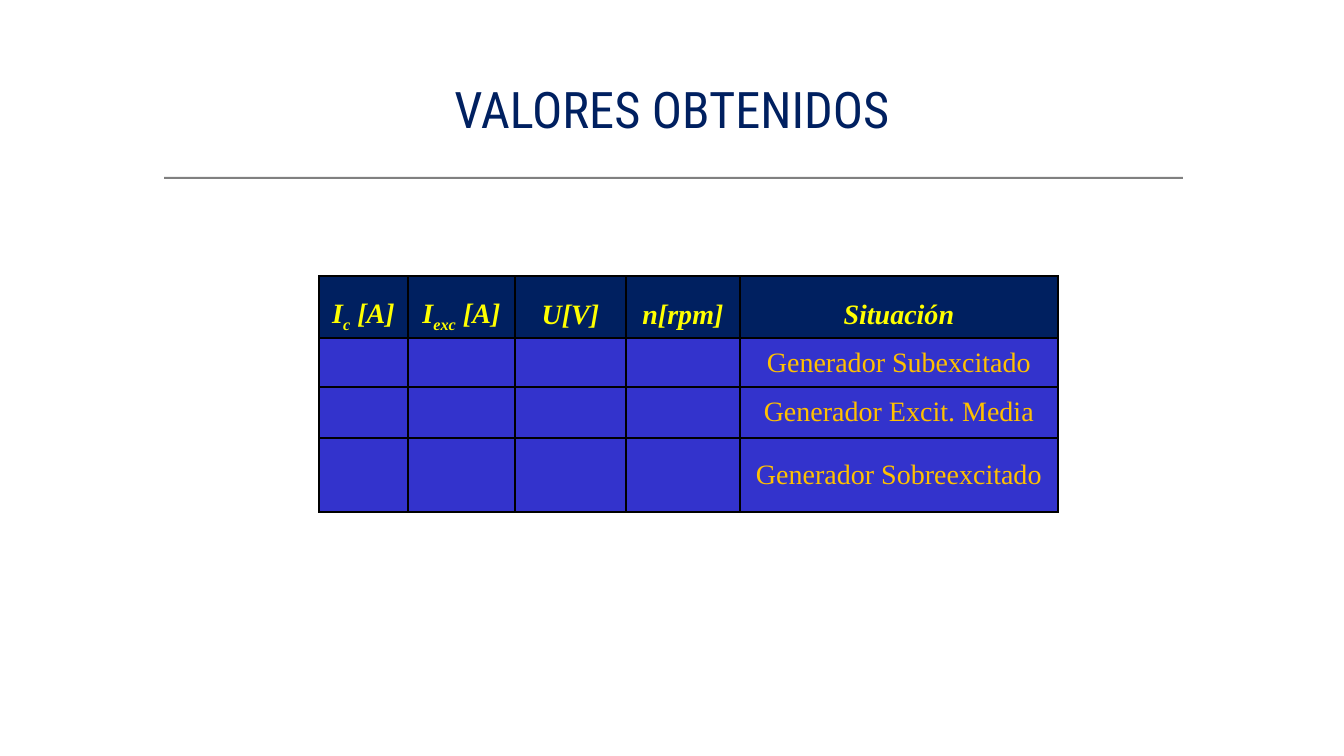
"""Build the slide with the table of measured generator values."""
from lxml.etree import SubElement
from pptx import Presentation
from pptx.dml.color import RGBColor
from pptx.enum.shapes import MSO_SHAPE
from pptx.enum.text import MSO_ANCHOR, PP_ALIGN
from pptx.oxml.ns import qn
from pptx.util import Emu, Pt

TITLE = "VALORES OBTENIDOS"
HEADS = [
    [("I", 0), ("c", 1), (" [A]", 0)],
    [("I", 0), ("exc", 1), (" [A]", 0)],
    [("U[V]", 0)],
    [("n[rpm]", 0)],
    [("Situación", 0)],
]
STATES = ["Generador Subexcitado", "Generador Excit. Media", "Generador Sobreexcitado"]
COLS = [89, 107, 111, 114, 318]
ROWS = [62, 49, 51, 74]
SIZE = (1344, 756)
TITLE_BOX = (168, 62, 1008, 101)
RULE_BOX = (164, 177, 1019, 2)
GRID_AT = (319, 276)

THEME = {
    "navy": "002060", "blue": "3333CC", "gold": "FFC000", "yellow": "FFFF00",
    "gray": "808080", "black": "000000",
    "sans": "Roboto Condensed", "serif": "Times New Roman",
    "big": 36, "body": 20, "line": 1,
}


def px(num):
    return Emu(round(num * 914400 / 100.8))


def color(name):
    return RGBColor.from_string(THEME[name])


def write(frame, parts, *, font="serif", size="body", ink="gold",
          strong=False, space=None):
    para = frame.paragraphs[0]
    para.alignment = PP_ALIGN.CENTER
    para.line_spacing = space
    for text, low in parts:
        run = para.add_run()
        run.text = text
        face = run.font
        face.name, face.size = THEME[font], Pt(THEME[size])
        face.color.rgb = color(ink)
        face.bold = face.italic = strong
        if low:
            face._element.set("baseline", "-25000")


def border(cell):
    props = cell._tc.get_or_add_tcPr()
    for side in ("lnL", "lnR", "lnT", "lnB"):
        line = SubElement(props, qn(f"a:{side}"), w=str(Pt(THEME["line"])))
        fill = SubElement(line, qn("a:solidFill"))
        SubElement(fill, qn("a:srgbClr"), val=THEME["black"])


def add_title(slide):
    rule = slide.shapes.add_shape(MSO_SHAPE.RECTANGLE, *map(px, RULE_BOX))
    rule.shadow.inherit = False
    rule.fill.solid()
    rule.fill.fore_color.rgb = color("gray")
    rule.line.fill.background()
    frame = slide.shapes.add_textbox(*map(px, TITLE_BOX)).text_frame
    frame.word_wrap = True
    frame.vertical_anchor = MSO_ANCHOR.MIDDLE
    write(frame, [(TITLE, 0)], font="sans", size="big", ink="navy", space=0.9)


def add_grid(slide):
    area = (*GRID_AT, sum(COLS), sum(ROWS))
    grid = slide.shapes.add_table(len(ROWS), len(COLS), *map(px, area)).table
    for col, width in zip(grid.columns, COLS):
        col.width = px(width)
    for row, height in zip(grid.rows, ROWS):
        row.height = px(height)
    for cell in grid.iter_cells():
        cell.margin_left = cell.margin_right = px(5)
        cell.margin_top = cell.margin_bottom = 0
        cell.vertical_anchor = MSO_ANCHOR.MIDDLE
        border(cell)
        cell.fill.solid()
        cell.fill.fore_color.rgb = color("blue")
    for num, parts in enumerate(HEADS):
        cell = grid.cell(0, num)
        cell.fill.fore_color.rgb = color("navy")
        write(cell.text_frame, parts, ink="yellow", strong=True, space=1.5)
    for num, state in enumerate(STATES, 1):
        write(grid.cell(num, len(COLS) - 1).text_frame, [(state, 0)])


def main():
    deck = Presentation()
    deck.slide_width, deck.slide_height = map(px, SIZE)
    slide = deck.slides.add_slide(deck.slide_layouts[6])
    add_title(slide)
    add_grid(slide)
    deck.save("out.pptx")


if __name__ == "__main__":
    main()
